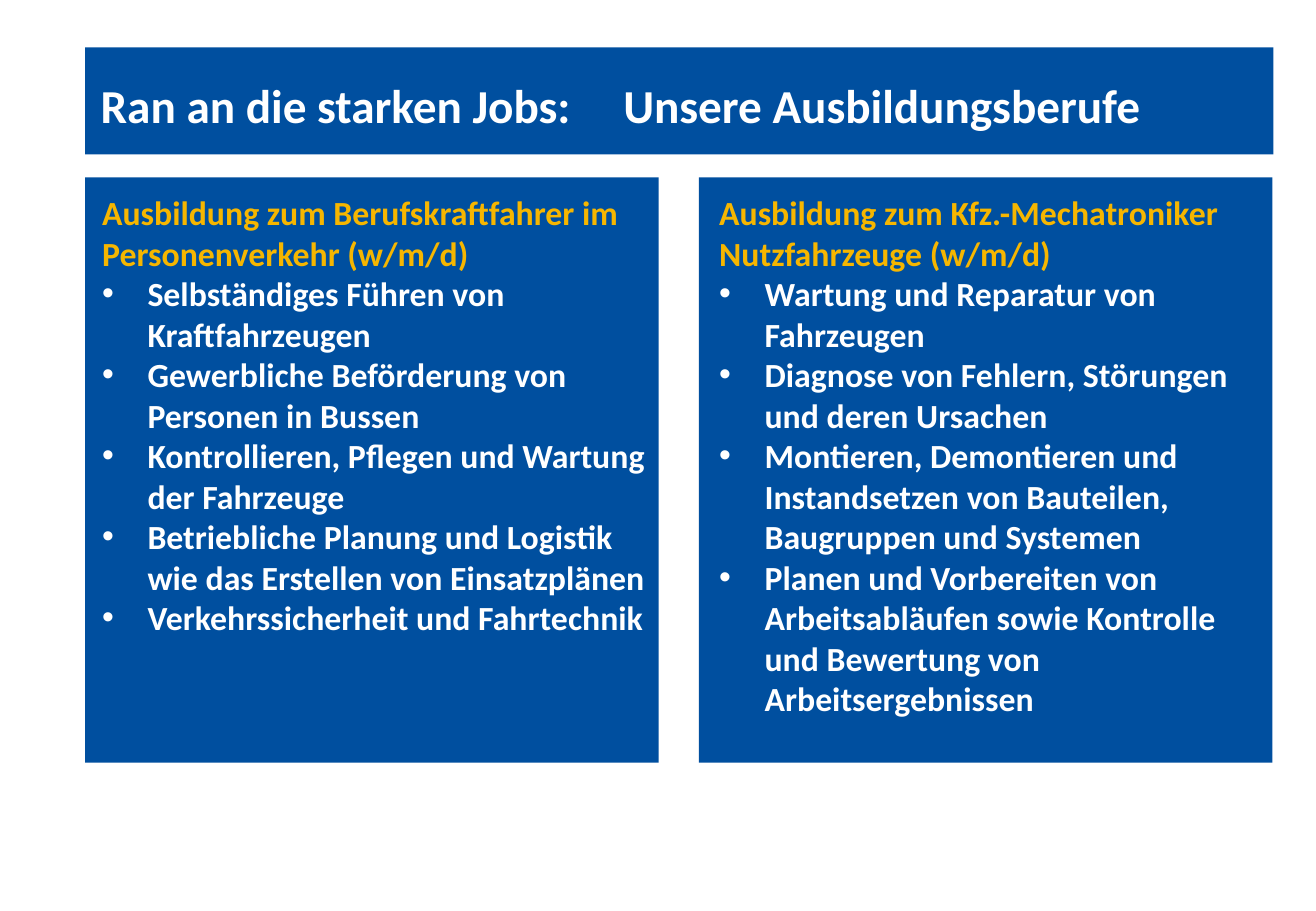
from lxml.etree import SubElement
from pptx import Presentation
from pptx.dml.color import RGBColor
from pptx.enum.shapes import MSO_SHAPE
from pptx.enum.text import MSO_ANCHOR, MSO_AUTO_SIZE, PP_ALIGN
from pptx.oxml.ns import qn
from pptx.util import Cm, Pt

BLUE, YELLOW, WHITE = "004F9F", "F6B600", "FFFFFF"
PANEL_TOP, PANEL_WIDTH, PANEL_HEIGHT = 3.71, 11.99, 12.24
INDENT = Cm(0.95)


def style(paragraph, size, color):
    paragraph.alignment = PP_ALIGN.LEFT
    paragraph.space_before = Pt(0)
    paragraph.font.name = "Calibri"
    paragraph.font.size = Pt(size)
    paragraph.font.bold = True
    paragraph.font.color.rgb = RGBColor.from_string(color)


def place(shape, left, top, width, height):
    shape.left, shape.top = Cm(left), Cm(top)
    shape.width, shape.height = Cm(width), Cm(height)


presentation = Presentation()
presentation.slide_width = Cm(27.51)
presentation.slide_height = Cm(19.05)
slide = presentation.slides.add_slide(presentation.slide_layouts[3])
title = slide.shapes.title

panels = [
    (1.78, 0.99, 24.84, 2.24),
    (1.78, PANEL_TOP, PANEL_WIDTH, PANEL_HEIGHT),
    (14.61, PANEL_TOP, PANEL_WIDTH, PANEL_HEIGHT),
]
for left, top, width, height in panels:
    panel = slide.shapes.add_shape(
        MSO_SHAPE.RECTANGLE, Cm(left), Cm(top), Cm(width), Cm(height)
    )
    panel.shadow.inherit = False
    panel.fill.solid()
    panel.fill.fore_color.rgb = RGBColor.from_string(BLUE)
    panel.line.fill.background()
    title.element.addprevious(panel.element)

subtitle = slide.shapes.add_textbox(0, 0, 0, 0)
headings = [
    (title, "Ran an die starken Jobs:", 1.85, 11.28),
    (subtitle, "Unsere Ausbildungsberufe", 12.78, 12.52),
]
for shape, text, left, width in headings:
    place(shape, left, 1.47, width, 1.45)
    frame = shape.text_frame
    frame.text = text
    frame.word_wrap = False
    frame.auto_size = MSO_AUTO_SIZE.NONE
    frame.vertical_anchor = MSO_ANCHOR.TOP
    style(frame.paragraphs[0], 28, WHITE)

trainings = [
    (1, 1.88, "Ausbildung zum Berufskraftfahrer im Personenverkehr (w/m/d)", [
        "Selbständiges Führen von Kraftfahrzeugen",
        "Gewerbliche Beförderung von Personen in Bussen",
        "Kontrollieren, Pflegen und Wartung der Fahrzeuge",
        "Betriebliche Planung und Logistik wie das Erstellen von Einsatzplänen",
        "Verkehrssicherheit und Fahrtechnik",
    ]),
    (2, 14.78, "Ausbildung zum Kfz.-Mechatroniker Nutzfahrzeuge (w/m/d)", [
        "Wartung und Reparatur von Fahrzeugen",
        "Diagnose von Fehlern, Störungen und deren Ursachen",
        "Montieren, Demontieren und Instandsetzen von Bauteilen, "
        "Baugruppen und Systemen",
        "Planen und Vorbereiten von Arbeitsabläufen sowie Kontrolle "
        "und Bewertung von Arbeitsergebnissen",
    ]),
]
for index, left, heading, tasks in trainings:
    body = slide.placeholders[index]
    place(body, left, 3.89, PANEL_WIDTH, 11.38)
    frame = body.text_frame
    frame.text = "\n".join([heading, *tasks])
    frame.word_wrap = True
    frame.auto_size = MSO_AUTO_SIZE.NONE
    for number, paragraph in enumerate(frame.paragraphs):
        properties = paragraph._p.get_or_add_pPr()
        if number == 0:
            properties.set("marL", "0")
            properties.set("indent", "0")
            SubElement(properties, qn("a:buNone"))
        else:
            properties.set("marL", str(INDENT))
            properties.set("indent", str(-INDENT))
            SubElement(properties, qn("a:buFont"), typeface="Arial")
            SubElement(properties, qn("a:buChar"), char="•")
        style(paragraph, 20, WHITE if number else YELLOW)

presentation.save("out.pptx")
